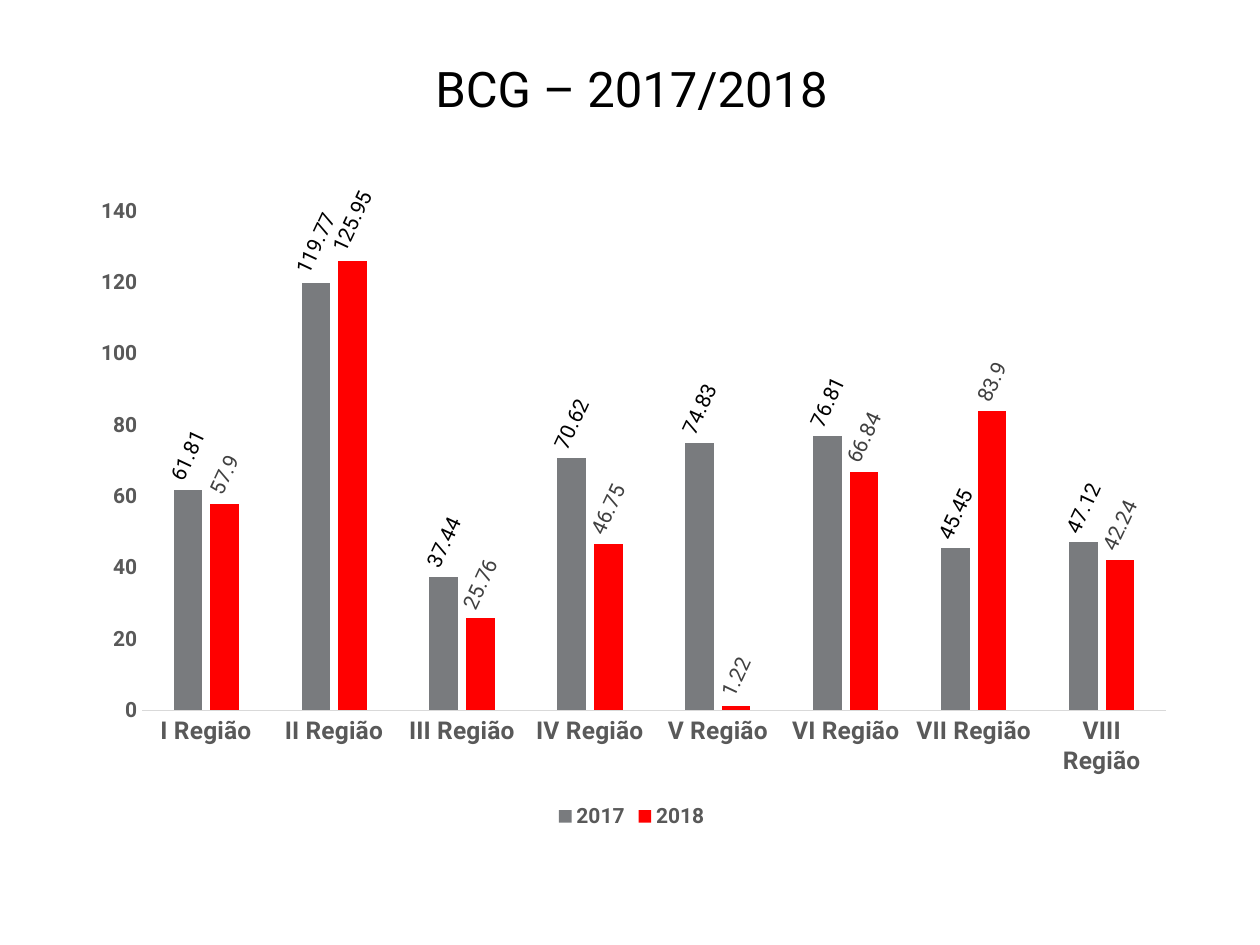
from lxml import etree
from pptx import Presentation
from pptx.chart.data import CategoryChartData
from pptx.dml.color import RGBColor
from pptx.enum.chart import XL_CHART_TYPE, XL_LABEL_POSITION, XL_LEGEND_POSITION, XL_TICK_MARK
from pptx.enum.text import MSO_ANCHOR, PP_ALIGN
from pptx.oxml.ns import qn
from pptx.util import Cm, Pt

COLUMNS = XL_CHART_TYPE.COLUMN_CLUSTERED
OUTSIDE = XL_LABEL_POSITION.OUTSIDE_END
BOTTOM = XL_LEGEND_POSITION.BOTTOM
NO_TICK = XL_TICK_MARK.NONE
MIDDLE, CENTER = MSO_ANCHOR.MIDDLE, PP_ALIGN.CENTER

TITLE = "BCG – 2017/2018"
REGIONS = [f"{n} Região" for n in ("I", "II", "III", "IV", "V", "VI", "VII", "VIII")]
COVERAGE = {
    "2017": (61.81, 119.77, 37.44, 70.62, 74.83, 76.81, 45.45, 47.12),
    "2018": (57.9, 125.95, 25.76, 46.75, 1.22, 66.84, 83.9, 42.24),
}
COLORS = {"black": "000000", "text": "595959", "label": "404040", "axis": "D9D9D9",
          "2017": "797B7E", "2018": "FF0000"}
LABEL_COLORS = {"2017": "black", "2018": "label"}
DARK_LABEL = ("2018", 1)
LABEL_ROTATION = -65
PLOT_LAYOUT = {"layoutTarget": "inner", "xMode": "edge", "yMode": "edge",
               "x": 0.06, "y": 0.04, "w": 0.92, "h": 0.77}
FORMATS = {
    "title": {"size": Pt(28), "bold": False},
    "category": {"size": Pt(14), "bold": True},
    "value": {"size": Pt(12), "bold": True},
    "label": {"size": Pt(12), "bold": False},
}


def rgb(name):
    return RGBColor.from_string(COLORS[name])


def set_font(font, style, color):
    for key, value in FORMATS[style].items():
        setattr(font, key, value)
    font.name = "Roboto"
    font.color.rgb = rgb(color)


def set_plot_layout(chart):
    area = chart._chartSpace.chart.plotArea
    for old in area.findall(qn("c:layout")):
        area.remove(old)
    layout = etree.Element(qn("c:layout"))
    manual = etree.SubElement(layout, qn("c:manualLayout"))
    for key, value in PLOT_LAYOUT.items():
        etree.SubElement(manual, qn(f"c:{key}")).set("val", str(value))
    area.insert(0, layout)


def format_axes(chart):
    for axis, style in ((chart.category_axis, "category"), (chart.value_axis, "value")):
        axis.major_tick_mark = axis.minor_tick_mark = NO_TICK
        axis.has_major_gridlines = False
        set_font(axis.tick_labels.font, style, "text")
    line = chart.category_axis.format.line
    line.color.rgb, line.width = rgb("axis"), Pt(0.75)
    axis = chart.value_axis
    axis.format.line.fill.background()
    axis.minimum_scale, axis.maximum_scale, axis.major_unit = 0, 140, 20


def format_series(series):
    series.format.fill.solid()
    series.format.fill.fore_color.rgb = rgb(series.name)
    labels = series.data_labels
    labels.show_value = True
    labels.position = OUTSIDE
    set_font(labels.font, "label", LABEL_COLORS[series.name])
    if series.name == DARK_LABEL[0]:
        label = series.points[DARK_LABEL[1]].data_label
        set_font(label.font, "label", "black")
        label.position = OUTSIDE
    for body in series.data_labels._element.iter(qn("a:bodyPr")):
        body.set("rot", str(LABEL_ROTATION * 60000))
        body.set("vert", "horz")


def add_coverage_chart(s):
    data = CategoryChartData()
    data.categories = REGIONS
    for name, values in COVERAGE.items():
        data.add_series(name, values)
    chart = s.shapes.add_chart(COLUMNS, Cm(1.52), Cm(3.73), Cm(22.43), Cm(13.08), data).chart
    chart.has_title = False
    chart.font.name, chart.font.size = "Roboto", Pt(10)
    chart.has_legend = True
    chart.legend.position = BOTTOM
    chart.legend.include_in_layout = False
    set_font(chart.legend.font, "value", "text")
    plot = chart.plots[0]
    plot.gap_width, plot.overlap, plot.vary_by_categories = 219, -27, False
    format_axes(chart)
    for series in plot.series:
        format_series(series)
    set_plot_layout(chart)


def add_title(s):
    sp = s.shapes.title
    sp.left, sp.top, sp.width, sp.height = Cm(2.29), Cm(1.02), Cm(20.88), Cm(1.52)
    tf = sp.text_frame
    tf.text, tf.vertical_anchor = TITLE, MIDDLE
    p = tf.paragraphs[0]
    p.alignment = CENTER
    set_font(p.runs[0].font, "title", "black")


def main():
    """Build the BCG coverage slide."""
    prs = Presentation()
    prs.slide_width, prs.slide_height = Cm(25.4), Cm(19.05)
    s = prs.slides.add_slide(prs.slide_layouts[5])
    add_title(s)
    add_coverage_chart(s)
    prs.save("out.pptx")


if __name__ == "__main__":
    main()
